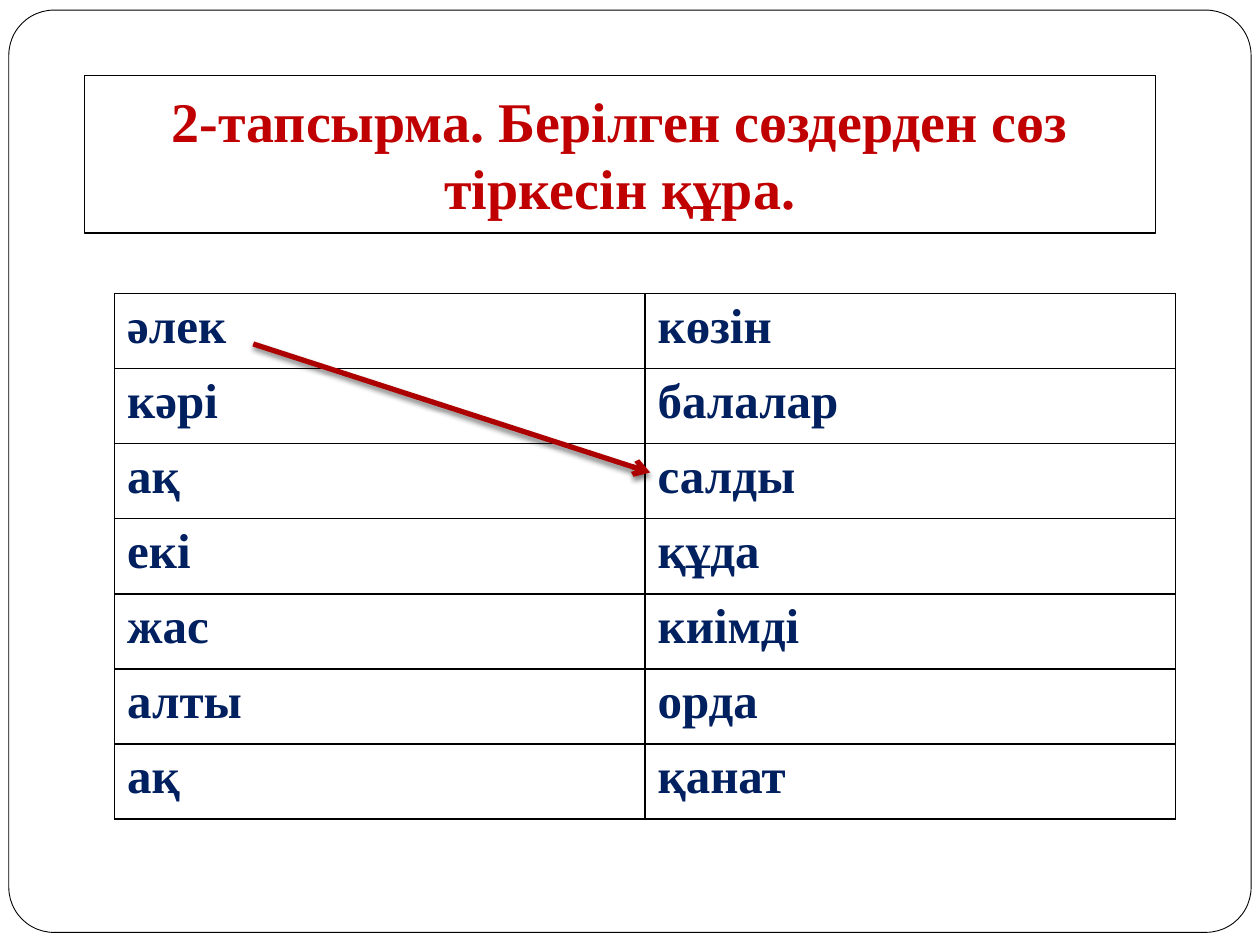
from lxml.etree import SubElement
from pptx import Presentation
from pptx.dml.color import RGBColor
from pptx.enum.shapes import MSO_CONNECTOR, MSO_SHAPE
from pptx.enum.text import MSO_ANCHOR, MSO_AUTO_SIZE, PP_ALIGN
from pptx.oxml import parse_xml
from pptx.oxml.ns import nsdecls, qn
from pptx.util import Inches, Pt

TITLE = "2-тапсырма. Берілген сөздерден сөз тіркесін құра."
WORD_PAIRS = [
    ("әлек", "көзін"),
    ("кәрі", "балалар"),
    ("ақ", "салды"),
    ("екі", "құда"),
    ("жас", "киімді"),
    ("алты", "орда"),
    ("ақ", "қанат"),
]
FONT = "Times New Roman"
BLACK, WHITE, RED, NAVY, ARROW_RED = "000000", "FFFFFF", "C00000", "002060", "AD0101"
TABLE_BOX = [Inches(v) for v in (0.91, 2.33, 8.42, 4.17)]
ARROW_ENDS = [Inches(v) for v in (2.01, 2.73, 5.16, 3.75)]


def rgb(color):
    return RGBColor.from_string(color)


def paint(sp, line_width):
    sp.fill.solid()
    sp.fill.fore_color.rgb = rgb(WHITE)
    sp.line.color.rgb = rgb(BLACK)
    sp.line.width = Pt(line_width)


def style_text(p, size, color):
    p.font.name, p.font.size, p.font.bold = FONT, Pt(size), True
    p.font.color.rgb = rgb(color)


def add_borders(cell):
    """Draw a thin black line on all four sides; lines must precede the fill."""
    tc_pr = cell._tc.get_or_add_tcPr()
    for i, side in enumerate(("lnL", "lnR", "lnT", "lnB")):
        tc_pr.insert(i, parse_xml(
            f'<a:{side} {nsdecls("a")} w="{Pt(1)}"><a:solidFill>'
            f'<a:srgbClr val="{BLACK}"/></a:solidFill></a:{side}>'))


def add_frame(slide):
    sp = slide.shapes.add_shape(MSO_SHAPE.ROUNDED_RECTANGLE, Inches(0.07),
                                Inches(0.08), Inches(9.86), Inches(7.32))
    sp.adjustments[0] = 0.049
    sp.shadow.inherit = False
    paint(sp, 0.5)
    slide.shapes._spTree.insert(2, sp._element)  # behind the title


def add_title(slide):
    sp = slide.shapes.title
    sp.left, sp.top, sp.width, sp.height = (Inches(v) for v in (0.67, 0.6, 8.5, 1.25))
    paint(sp, 1)
    tf = sp.text_frame
    tf.text = TITLE
    tf.auto_size = MSO_AUTO_SIZE.NONE
    tf.vertical_anchor = MSO_ANCHOR.BOTTOM
    tf.margin_bottom = Inches(0.1)
    p = tf.paragraphs[0]
    p.alignment = PP_ALIGN.CENTER
    style_text(p, 32, RED)


def add_word_table(slide):
    table = slide.shapes.add_table(len(WORD_PAIRS), 2, *TABLE_BOX).table
    for r, pair in enumerate(WORD_PAIRS):
        for c, word in enumerate(pair):
            cell = table.cell(r, c)
            cell.text = word
            style_text(cell.text_frame.paragraphs[0], 28, NAVY)
            cell.fill.background()
            add_borders(cell)


def add_answer_arrow(slide):
    arrow = slide.shapes.add_connector(MSO_CONNECTOR.STRAIGHT, *ARROW_ENDS)
    arrow.line.color.rgb = rgb(ARROW_RED)
    arrow.line.width = Pt(3)
    SubElement(arrow.line._get_or_add_ln(), qn("a:tailEnd"), type="arrow")
    arrow._element.spPr.append(parse_xml(
        f'<a:effectLst {nsdecls("a")}><a:outerShdw blurRad="{Pt(3)}" dist="{Pt(2)}" '
        f'dir="5400000" rotWithShape="0"><a:srgbClr val="{BLACK}">'
        '<a:alpha val="50000"/></a:srgbClr></a:outerShdw></a:effectLst>'))


def main():
    prs = Presentation()
    prs.slide_width, prs.slide_height = Inches(10), Inches(7.5)
    slide = prs.slides.add_slide(prs.slide_layouts[5])
    add_frame(slide)
    add_title(slide)
    add_word_table(slide)
    add_answer_arrow(slide)
    prs.save("out.pptx")


if __name__ == "__main__":
    main()
